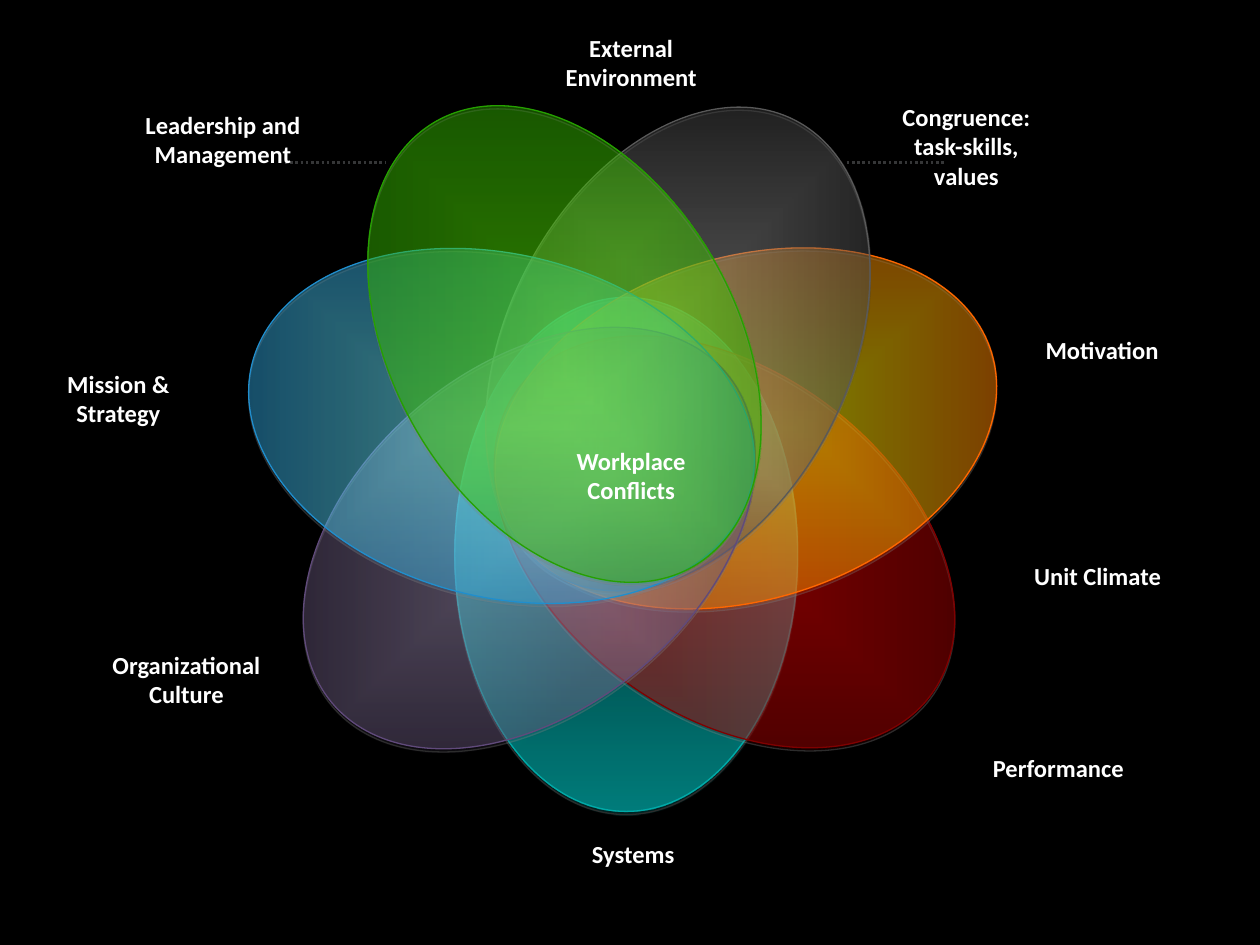
from typing import NamedTuple

from lxml import etree
from pptx import Presentation
from pptx.dml.color import RGBColor
from pptx.enum.dml import MSO_LINE
from pptx.enum.shapes import MSO_CONNECTOR, MSO_SHAPE
from pptx.enum.text import MSO_AUTO_SIZE, PP_ALIGN
from pptx.oxml import parse_xml
from pptx.oxml.ns import nsdecls, qn
from pptx.slide import Slide
from pptx.util import Emu, Pt

EMU_PER_PX = 9144  # 100 px to the inch
SLIDE_WIDTH, SLIDE_HEIGHT = 1000, 750
PETAL_WIDTH, PETAL_HEIGHT = 408, 272
LABEL_WIDTH = 146
LINE_HEIGHT, LABEL_PADDING = 24, 10
DOTTED_LINE_TOP = 129
PETAL_OPACITY = 40
FONT_NAME, FONT_SIZE = "Calibri", Pt(14)

BLACK = RGBColor(0x00, 0x00, 0x00)
WHITE = RGBColor(0xFF, 0xFF, 0xFF)
CHARCOAL = RGBColor(0x35, 0x36, 0x37)
SHADOW_GRAY = RGBColor(0x80, 0x80, 0x80)
TEAL = RGBColor(0x00, 0xAA, 0xA8)
AQUA = RGBColor(0x00, 0xFF, 0xFC)
RED = RGBColor(0xFF, 0x00, 0x00)
MAROON = RGBColor(0x80, 0x00, 0x00)
YELLOW = RGBColor(0xFF, 0xFF, 0x00)
ORANGE = RGBColor(0xFF, 0x66, 0x00)
SILVER = RGBColor(0xA6, 0xA6, 0xA6)
DARK_GRAY = RGBColor(0x26, 0x26, 0x26)
MID_GRAY = RGBColor(0x59, 0x59, 0x59)
LAVENDER = RGBColor(0xB3, 0xA2, 0xC7)
DARK_PURPLE = RGBColor(0x40, 0x31, 0x52)
PURPLE = RGBColor(0x60, 0x4A, 0x7B)
SKY = RGBColor(0x74, 0xF4, 0xFF)
BLUE = RGBColor(0x20, 0x8E, 0xCD)
LIME = RGBColor(0x5A, 0xF3, 0x00)
GREEN = RGBColor(0x26, 0xA0, 0x00)

CENTER, LEFT = PP_ALIGN.CENTER, PP_ALIGN.LEFT
ELLIPSE, STRAIGHT = MSO_SHAPE.OVAL, MSO_CONNECTOR.STRAIGHT
GROW = MSO_AUTO_SIZE.SHAPE_TO_FIT_TEXT
# Square dots are stored as sysDot
DOTTED = MSO_LINE.ROUND_DOT


class Petal(NamedTuple):
    left: int
    top: int
    rotation: float
    inner: RGBColor
    outer: RGBColor
    outline: RGBColor


class Label(NamedTuple):
    left: int
    top: int
    paragraphs: tuple[str, ...]
    line_count: int = 1
    align: PP_ALIGN = CENTER
    width: int = LABEL_WIDTH


PETALS = (
    Petal(293, 304, 90, TEAL, AQUA, TEAL),
    Petal(371, 294, 216.6, RED, MAROON, MAROON),
    Petal(388, 204, 162.8, YELLOW, ORANGE, ORANGE),
    Petal(334, 141, 117, SILVER, DARK_GRAY, MID_GRAY),
    Petal(216, 291, 140.2, LAVENDER, DARK_PURPLE, PURPLE),
    Petal(194, 202, 194, SKY, BLUE, BLUE),
    Petal(244, 137, 239.8, LIME, GREEN, GREEN),
)

LABELS = (
    Label(104, 82, ("Leadership and Management",), 2),
    Label(694, 76, ("Congruence: task-skills, values",), 3),
    Label(21, 288, ("Mission & Strategy",), 2),
    Label(75, 511, ("Organizational Culture",), 2),
    Label(820, 261, ("Motivation",), align=LEFT),
    Label(811, 440, ("Unit Climate",), align=LEFT),
    Label(428, 349, ("Workplace", "Conflicts"), 2),
    Label(428, 21, ("External Environment",), 2),
    Label(767, 593, ("Performance",)),
    Label(370, 661, ("Systems",), width=265),
)

DOTTED_LINE_SPANS = ((226, 306), (672, 751))


def px(length: int) -> Emu:
    return Emu(length * EMU_PER_PX)


def radial_fill(inner: RGBColor, outer: RGBColor) -> etree._Element:
    """Return a translucent gradient that runs from the centre outwards."""
    stops = "".join(
        f'<a:gs pos="{position}"><a:srgbClr val="{color}">'
        f'<a:alpha val="{PETAL_OPACITY * 1000}"/></a:srgbClr></a:gs>'
        for position, color in ((0, inner), (100000, outer))
    )
    return parse_xml(
        f'<a:gradFill {nsdecls("a")} rotWithShape="1"><a:gsLst>{stops}</a:gsLst>'
        '<a:path path="shape">'
        '<a:fillToRect l="50000" t="50000" r="50000" b="50000"/>'
        "</a:path></a:gradFill>"
    )


def drop_shadow() -> etree._Element:
    return parse_xml(
        f'<a:outerShdw {nsdecls("a")} blurRad="0" dist="{Pt(1.8)}" dir="5400000" '
        f'rotWithShape="0"><a:srgbClr val="{SHADOW_GRAY}">'
        '<a:alpha val="35000"/></a:srgbClr></a:outerShdw>'
    )


def draw_petal(slide: Slide, petal: Petal) -> None:
    shape = slide.shapes.add_shape(
        ELLIPSE, px(petal.left), px(petal.top), px(PETAL_WIDTH), px(PETAL_HEIGHT)
    )
    shape.rotation = petal.rotation
    shape.line.color.rgb = petal.outline
    shape.line.width = Pt(0.75)
    shape.fill.background()
    shape.shadow.inherit = False
    properties = shape._element.spPr
    properties.replace(
        properties.find(qn("a:noFill")), radial_fill(petal.inner, petal.outer)
    )
    properties.find(qn("a:effectLst")).append(drop_shadow())


def draw_label(slide: Slide, label: Label) -> None:
    height = LABEL_PADDING + LINE_HEIGHT * label.line_count
    box = slide.shapes.add_textbox(
        px(label.left), px(label.top), px(label.width), px(height)
    )
    frame = box.text_frame
    frame.word_wrap = True
    frame.auto_size = GROW
    for index, text in enumerate(label.paragraphs):
        para = frame.add_paragraph() if index else frame.paragraphs[0]
        para.alignment = label.align
        span = para.add_run()
        span.text = text
        span.font.name = FONT_NAME
        span.font.size = FONT_SIZE
        span.font.bold = True
        span.font.color.rgb = WHITE


def draw_dotted_line(slide: Slide, start: int, end: int) -> None:
    line = slide.shapes.add_connector(
        STRAIGHT, px(start), px(DOTTED_LINE_TOP), px(end), px(DOTTED_LINE_TOP)
    )
    line.line.color.rgb = CHARCOAL
    line.line.width = Pt(1.5)
    line.line.dash_style = DOTTED
    etree.SubElement(line._element.spPr, qn("a:effectLst"))


def main() -> None:
    deck = Presentation()
    deck.slide_width, deck.slide_height = px(SLIDE_WIDTH), px(SLIDE_HEIGHT)
    page = deck.slides.add_slide(deck.slide_layouts[6])
    page.background.fill.solid()
    page.background.fill.fore_color.rgb = BLACK
    for petal in PETALS:
        draw_petal(page, petal)
    for start, end in DOTTED_LINE_SPANS:
        draw_dotted_line(page, start, end)
    for label in LABELS:
        draw_label(page, label)
    deck.save("out.pptx")


if __name__ == "__main__":
    main()
